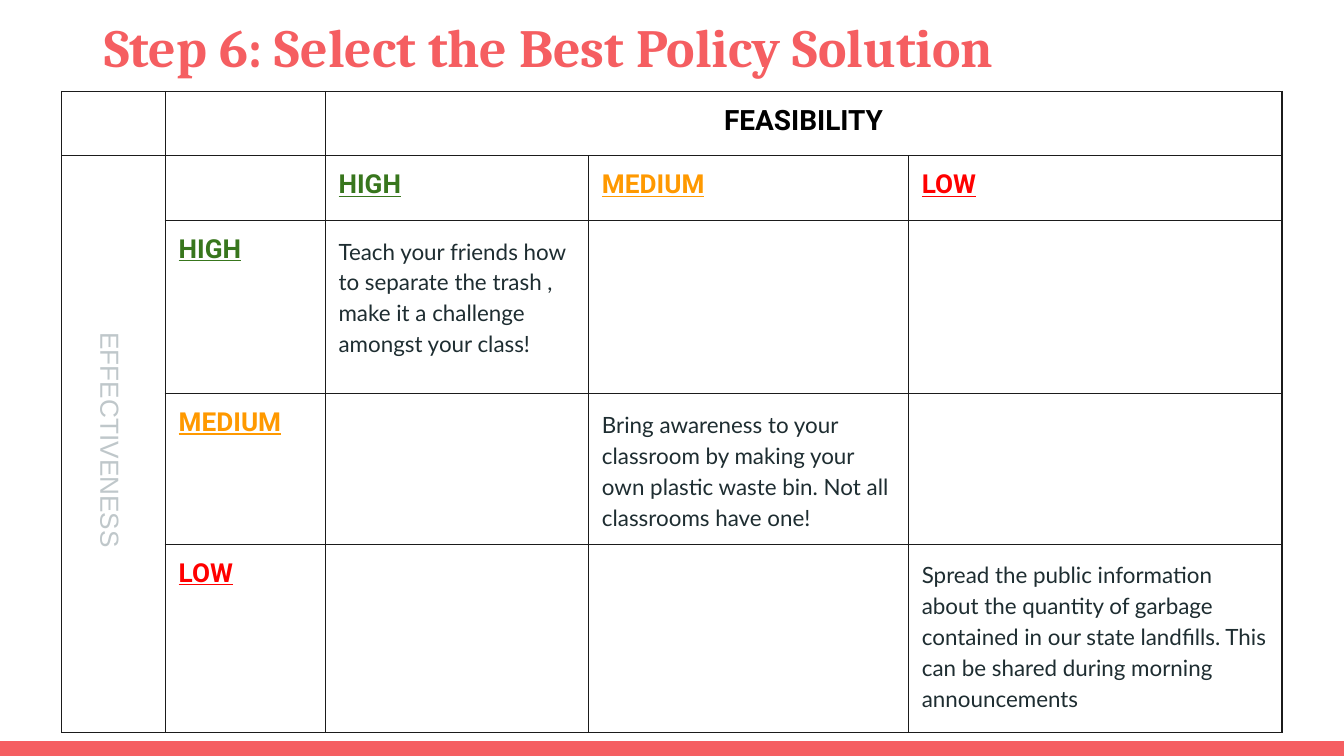
from lxml.etree import SubElement
from pptx import Presentation
from pptx.dml.color import RGBColor
from pptx.enum.shapes import MSO_SHAPE
from pptx.enum.text import MSO_ANCHOR, PP_ALIGN
from pptx.oxml.ns import qn
from pptx.util import Inches, Pt

THEME = {
    "accent": "F55E61", "line": "1B1B1B", "body": "1E2D31", "muted": "BFC7CA",
    "black": "000000", "HIGH": "38761D", "MEDIUM": "FF9900", "LOW": "FF0000",
    "title_size": 28.8, "head_size": 15, "level_size": 14, "body_size": 12,
    "title_font": "Cambria", "head_font": "Roboto", "body_font": "Lato", "side_font": "Arial",
}

TITLE = "Step 6: Select the Best Policy Solution"
COLUMN_AXIS, ROW_AXIS = "FEASIBILITY", "EFFECTIVENESS"
LEVELS = ["HIGH", "MEDIUM", "LOW"]
# (effectiveness, feasibility): policy idea
IDEAS = {
    ("HIGH", "HIGH"): "Teach your friends how to separate the trash , "
                      "make it a challenge amongst your class!",
    ("MEDIUM", "MEDIUM"): "Bring awareness to your classroom by making your own "
                          "plastic waste bin. Not all classrooms have one!",
    ("LOW", "LOW"): "Spread the public information about the quantity of garbage "
                    "contained in our state landfills. This can be shared during "
                    "morning announcements",
}

SLIDE_W = 10
SLIDE_H = SLIDE_W * 9 / 16
FOOTER_H = 0.11
TABLE_LEFT, TABLE_TOP = 0.46, 0.68
COL_WIDTHS = [0.77, 1.19, 1.96, 2.38, 2.78]
ROW_HEIGHTS = [0.48, 0.48, 1.29, 1.12, 1.4]
FIRST = 2  # index of the first level row and column
INSET = Inches(0.1)


def add_run(p, text, size, font, color, bold=False, underline=False):
    r = p.add_run()
    r.text = text
    r.font.size, r.font.name = Pt(size), font
    r.font.bold, r.font.underline = bold, underline
    r.font.color.rgb = RGBColor.from_string(color)


def add_label(slide, box, anchor):
    sp = slide.shapes.add_textbox(*map(Inches, box))
    tf = sp.text_frame
    tf.word_wrap = True
    tf.vertical_anchor = anchor
    return sp, tf.paragraphs[0]


def style_cell(cell):
    """Clear the fill, draw all four borders and keep empty text small."""
    cell.margin_left = cell.margin_right = cell.margin_top = cell.margin_bottom = INSET
    tc_pr = cell._tc.get_or_add_tcPr()
    for side in ("lnL", "lnR", "lnT", "lnB"):
        ln = SubElement(tc_pr, qn(f"a:{side}"), w=str(Pt(0.75)))
        fill = SubElement(ln, qn("a:solidFill"))
        SubElement(fill, qn("a:srgbClr"), val=THEME["line"])
    cell.fill.background()
    end = SubElement(cell.text_frame.paragraphs[0]._p, qn("a:endParaRPr"))
    end.set("sz", str(THEME["body_size"] * 100))


def add_level(cell, level):
    add_run(cell.text_frame.paragraphs[0], level, THEME["level_size"],
            THEME["head_font"], THEME[level], bold=True, underline=True)


def add_matrix(slide):
    frame = slide.shapes.add_table(
        len(ROW_HEIGHTS), len(COL_WIDTHS), Inches(TABLE_LEFT), Inches(TABLE_TOP),
        Inches(sum(COL_WIDTHS)), Inches(sum(ROW_HEIGHTS)))
    table = frame.table
    table.first_row = table.horz_banding = False
    for col, width in zip(table.columns, COL_WIDTHS):
        col.width = Inches(width)
    for row, height in zip(table.rows, ROW_HEIGHTS):
        row.height = Inches(height)
    for cell in table.iter_cells():
        style_cell(cell)
    table.cell(0, FIRST).merge(table.cell(0, len(COL_WIDTHS) - 1))
    table.cell(1, 0).merge(table.cell(len(ROW_HEIGHTS) - 1, 0))

    p = table.cell(0, FIRST).text_frame.paragraphs[0]
    p.alignment = PP_ALIGN.CENTER
    add_run(p, COLUMN_AXIS, THEME["head_size"], THEME["head_font"], THEME["black"], bold=True)
    for i, level in enumerate(LEVELS, FIRST):
        add_level(table.cell(1, i), level)
        add_level(table.cell(i, 1), level)
    for (effect, feasible), idea in IDEAS.items():
        cell = table.cell(FIRST + LEVELS.index(effect), FIRST + LEVELS.index(feasible))
        p = cell.text_frame.paragraphs[0]
        p.line_spacing, p.space_after = 1.15, Pt(12)
        add_run(p, idea, THEME["body_size"], THEME["body_font"], THEME["body"])


def main():
    prs = Presentation()
    prs.slide_width, prs.slide_height = Inches(SLIDE_W), Inches(SLIDE_H)
    slide = prs.slides.add_slide(prs.slide_layouts[6])

    footer = slide.shapes.add_shape(
        MSO_SHAPE.RECTANGLE, 0, Inches(SLIDE_H - FOOTER_H), Inches(SLIDE_W), Inches(FOOTER_H))
    footer.shadow.inherit = False
    footer.fill.solid()
    footer.fill.fore_color.rgb = RGBColor.from_string(THEME["accent"])
    footer.line.fill.background()

    add_matrix(slide)

    _, p = add_label(slide, (0.68, 0, 9.32, 0.68), MSO_ANCHOR.MIDDLE)
    add_run(p, TITLE, THEME["title_size"], THEME["title_font"], THEME["accent"], bold=True)

    side, p = add_label(slide, (-0.44, 3.12, 2.55, 0.31), MSO_ANCHOR.TOP)
    side.rotation = 90
    p.alignment = PP_ALIGN.CENTER
    add_run(p, ROW_AXIS, THEME["level_size"], THEME["side_font"], THEME["muted"])

    prs.save("out.pptx")


if __name__ == "__main__":
    main()
